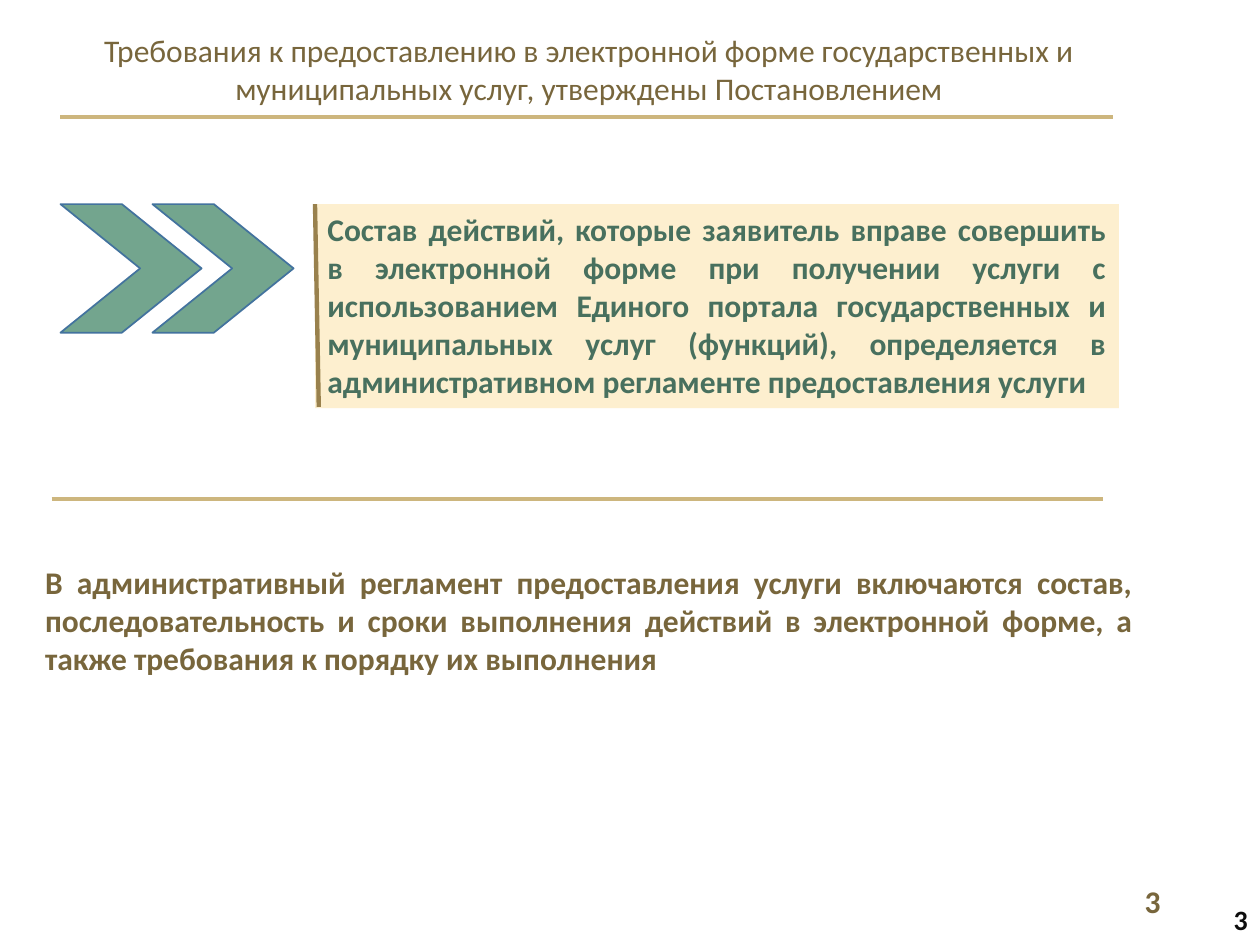
from pptx import Presentation
from pptx.dml.color import RGBColor
from pptx.enum import shapes, text
from pptx.oxml import parse_xml
from pptx.util import Inches, Pt

BROWN, GREEN, GOLD = "78663C", "48705E", "CDB67E"
LEFT, MID, RIGHT = text.PP_ALIGN.JUSTIFY, text.PP_ALIGN.CENTER, text.PP_ALIGN.RIGHT
TOP, CENTER = text.MSO_ANCHOR.TOP, text.MSO_ANCHOR.MIDDLE

# Content: words, box, size, colour, bold, alignment, anchor, fill
TEXTS = [
    ("Требования к предоставлению в электронной форме государственных и "
     "муниципальных услуг, утверждены Постановлением",
     (0.26, 0.2, 8.83, 0.71), 18, BROWN, False, MID, TOP, None),
    ("Состав действий, которые заявитель вправе совершить в электронной форме "
     "при получении услуги с использованием Единого портала государственных и "
     "муниципальных услуг (функций), определяется в административном "
     "регламенте предоставления услуги",
     (2.5, 1.62, 6.38, 1.62), 18, GREEN, True, LEFT, TOP, "FDEFCF"),
    ("В административный регламент предоставления услуги включаются состав, "
     "последовательность и сроки выполнения действий в электронной форме, "
     "а также требования к порядку их выполнения",
     (0.26, 4.42, 8.83, 1.01), 18, BROWN, True, LEFT, TOP, None),
    ("3", (7.06, 6.95, 2.25, 0.4), 18, BROWN, True, RIGHT, CENTER, None),
    ("3", (7.75, 7.1, 2.25, 0.4), 16, "0D0D0D", True, RIGHT, CENTER, None),
]
# Lines: start x, start y, end x, end y, colour, width
LINES = [
    (2.5, 1.62, 2.53, 3.23, "99814D", 2.5),
    (0.48, 0.93, 8.83, 0.93, GOLD, 2.25),
    (0.41, 3.96, 8.75, 3.96, GOLD, 2.25),
]
ARROWS = 2
STEP = 0.73


def color(code):
    return RGBColor.from_string(code)


def add_text(slide, words, box, size, ink, bold, align, anchor, fill):
    place = [Inches(v) for v in box]
    if fill:
        shape = slide.shapes.add_shape(shapes.MSO_SHAPE.RECTANGLE, *place)
        shape.shadow.inherit = False
        shape.fill.solid()
        shape.fill.fore_color.rgb = color(fill)
        shape.line.fill.background()
    else:
        shape = slide.shapes.add_textbox(*place)
    frame = shape.text_frame
    frame.text = words
    frame.word_wrap = True
    frame.vertical_anchor = anchor
    para = frame.paragraphs[0]
    para.alignment = align
    font = para.runs[0].font
    font.name, font.size, font.bold = "Calibri", Pt(size), bold
    font.color.rgb = color(ink)


def add_arrow(slide, left):
    arrow = slide.shapes.add_shape(shapes.MSO_SHAPE.CHEVRON, Inches(left),
                                   Inches(1.62), Inches(1.12), Inches(1.02))
    arrow.adjustments[0] = 0.62
    arrow.shadow.inherit = False
    arrow.fill.solid()
    arrow.fill.fore_color.rgb = color("73A58E")
    arrow.line.color.rgb = color("43739E")
    arrow.line.width = Pt(1)


def add_line(slide, x1, y1, x2, y2, ink, width):
    line = slide.shapes.add_connector(shapes.MSO_CONNECTOR.STRAIGHT,
                                      *[Inches(v) for v in (x1, y1, x2, y2)])
    line.line.color.rgb = color(ink)
    line.line.width = Pt(width)
    line._element.spPr.append(parse_xml(
        '<a:effectLst xmlns:a="http://schemas.openxmlformats.org/drawingml/2006/main"/>'))


def main():
    deck = Presentation()
    deck.slide_width, deck.slide_height = Inches(10), Inches(7.5)
    slide = deck.slides.add_slide(deck.slide_layouts[6])
    for item in TEXTS:
        add_text(slide, *item)
    # Chevrons, evenly spaced
    for i in range(ARROWS):
        add_arrow(slide, 0.48 + i * STEP)
    # Rules and the edge of the filled box
    for item in LINES:
        add_line(slide, *item)
    deck.save("out.pptx")


if __name__ == "__main__":
    main()
